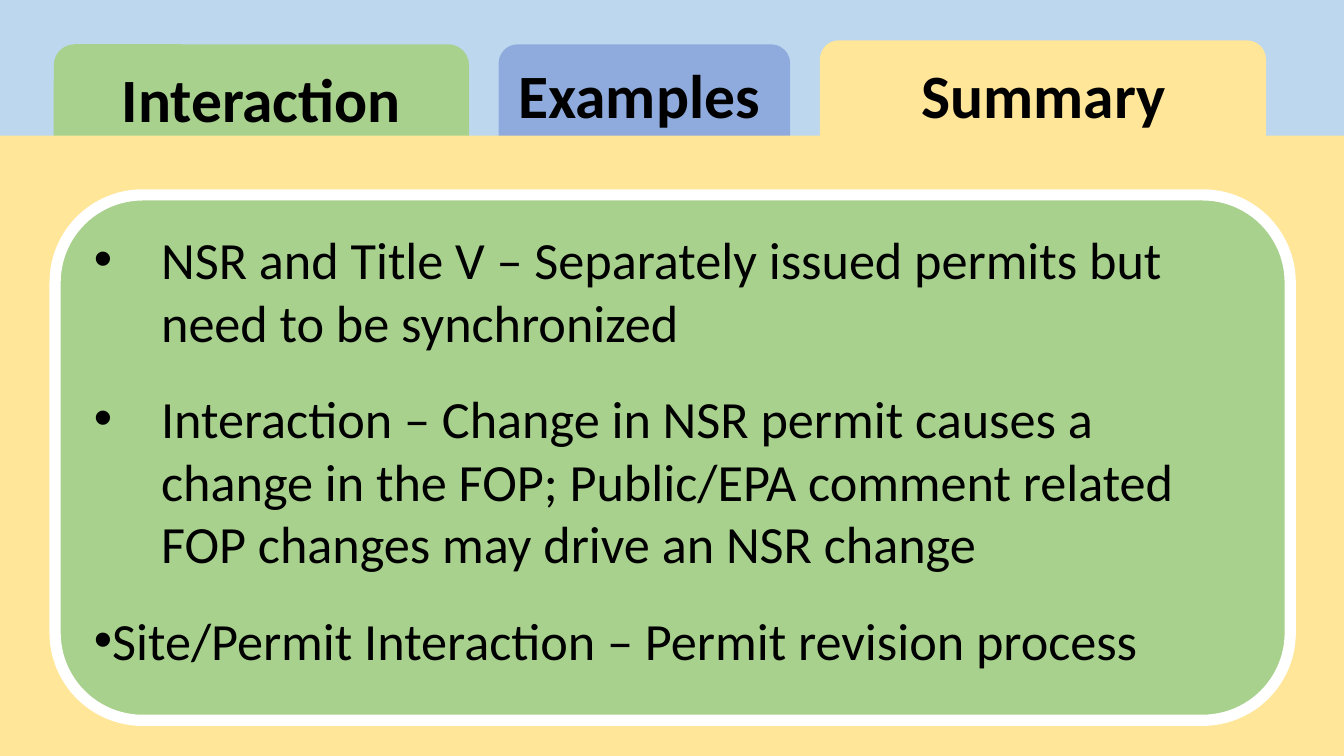
from lxml.etree import SubElement
from pptx import Presentation
from pptx.dml.color import RGBColor
from pptx.enum.shapes import MSO_SHAPE
from pptx.enum.text import MSO_ANCHOR, PP_ALIGN
from pptx.oxml.ns import qn
from pptx.util import Inches, Pt

THEME = {
    "font": "Calibri",
    "tab_size": Pt(33),
    "body_size": Pt(28),
    "text": RGBColor.from_string("000000"),
    "sky": RGBColor.from_string("BDD7EE"),
    "blue": RGBColor.from_string("8FAADC"),
    "yellow": RGBColor.from_string("FFE699"),
    "green": RGBColor.from_string("A9D18E"),
    "border": RGBColor.from_string("FFFFFF"),
}

# Widescreen slide on a grid of 100 columns; rows have the same size as columns
COLUMNS = 100
ROWS = COLUMNS * 9 / 16
deck = Presentation()
deck.slide_width = Inches(10)
deck.slide_height = deck.slide_width * 9 // 16
CELL = deck.slide_width / COLUMNS
slide = deck.slides.add_slide(deck.slide_layouts[6])
slide.background.fill.solid()
slide.background.fill.fore_color.rgb = THEME["sky"]


def add_block(kind, area, color):
    block = slide.shapes.add_shape(kind, *[round(n * CELL) for n in area])
    block.shadow.inherit = False
    block.fill.solid()
    block.fill.fore_color.rgb = THEME[color]
    block.line.fill.background()
    return block


def add_words(paragraph, words, size, bold=False):
    run = paragraph.add_run()
    run.text = words
    run.font.name = THEME["font"]
    run.font.size = THEME[size]
    run.font.bold = bold
    run.font.color.rgb = THEME["text"]


# Folder tabs, their lower ends covered by the page
tabs = [
    # title, color, tab area, label area, anchor, line spacing
    ("Examples", "blue", (37.1, 3.3, 21.7, 8.5), (37.1, 3.8, 20.9, 6.3), MSO_ANCHOR.TOP, 1.0),
    ("Summary", "yellow", (61, 3, 33.2, 8.5), (62.2, 3.8, 30.9, 6.3), MSO_ANCHOR.TOP, 1.0),
    ("Interaction", "green", (4, 3.3, 30.9, 9.3), (5.9, 4, 27.1, 7.2), MSO_ANCHOR.MIDDLE, 0.9),
]
for title, color, tab_area, label_area, anchor, spacing in tabs:
    add_block(MSO_SHAPE.ROUNDED_RECTANGLE, tab_area, color)

# Folder page
page_top = 10.1
add_block(MSO_SHAPE.RECTANGLE, (0, page_top, COLUMNS, ROWS - page_top), "yellow")

# Tab labels
for title, color, tab_area, label_area, anchor, spacing in tabs:
    label = slide.shapes.add_textbox(*[round(n * CELL) for n in label_area]).text_frame
    label.word_wrap = True
    label.vertical_anchor = anchor
    label.margin_left = label.margin_right = Inches(0.07)
    label.margin_top = label.margin_bottom = Inches(0.04)
    heading = label.paragraphs[0]
    heading.alignment = PP_ALIGN.CENTER
    heading.line_spacing = spacing
    add_words(heading, title, "tab_size", bold=True)

# Summary panel
panel = add_block(MSO_SHAPE.ROUNDED_RECTANGLE, (4.1, 14.5, 91.9, 39.1), "green")
panel.line.color.rgb = THEME["border"]
panel.line.width = Pt(6)
summary = panel.text_frame
summary.word_wrap = True
summary.vertical_anchor = MSO_ANCHOR.TOP

# Summary points with the left margin of each, in columns
hanging = 5
points = [
    ("NSR and Title V – Separately issued permits but need to be synchronized", hanging),
    ("Interaction – Change in NSR permit causes a change in the FOP; "
     "Public/EPA comment related FOP changes may drive an NSR change", hanging),
    ("Site/Permit Interaction – Permit revision process", 0),
]
for number, (words, margin) in enumerate(points):
    point = summary.add_paragraph() if number else summary.paragraphs[0]
    point.level = 1
    point.alignment = PP_ALIGN.LEFT
    point.space_before, point.space_after = Pt(6), Pt(12)
    properties = point._p.get_or_add_pPr()
    properties.set("marL", str(round(margin * CELL)))
    properties.set("indent", str(round(-hanging * CELL)))
    SubElement(properties, qn("a:buFont"), typeface="Arial")
    SubElement(properties, qn("a:buChar"), char="•")
    add_words(point, words, "body_size")

deck.save("out.pptx")
